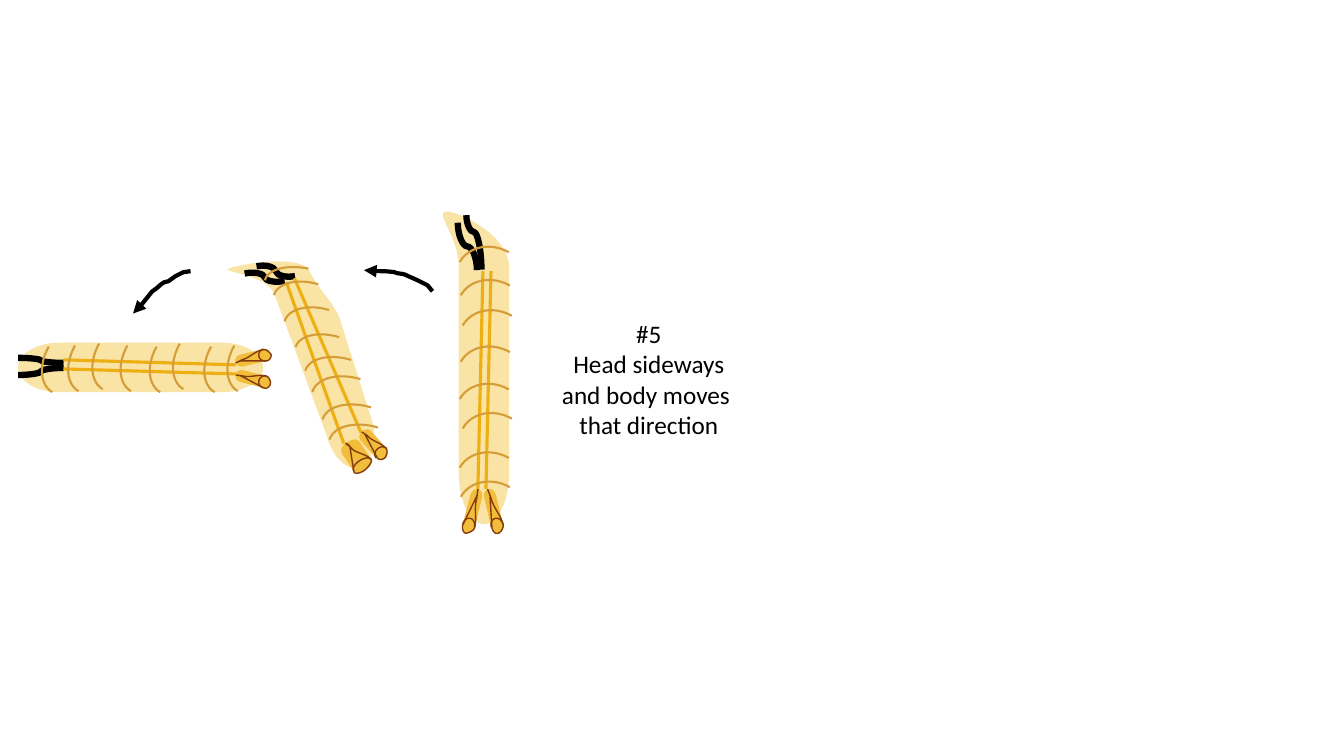
import math
from dataclasses import dataclass
from typing import Any, List, Optional, Tuple, Union

import lxml.etree
import pptx
import pptx.dml.color
import pptx.enum.shapes
import pptx.enum.text
import pptx.oxml.ns
import pptx.util

Inches = pptx.util.Inches
Shapes = pptx.enum.shapes.MSO_SHAPE
Connectors = pptx.enum.shapes.MSO_CONNECTOR
# A start point, then pairs for straight lines and sixes for Bezier curves
Path = List[Tuple[float, ...]]

BLACK, SKIN, GOLD, CORD, BROWN, RING = "000000", "F9E3A5", "F1BD3B", "EEAF12", "843C0B", "D59D37"
CURVE_STEPS = 12


@dataclass
class Box:
    left: float
    top: float
    width: float
    height: float
    rotation: float = 0


@dataclass
class Hook:
    box: Box
    flipped: bool
    bend: float = 0.5


@dataclass
class Spiracle:
    drum: Box
    outline: Path


@dataclass
class Larva:
    body: Union[Path, Box]
    hooks: List[Hook]
    spiracles: List[Spiracle]
    cords: List[Tuple[float, float, float, float]]
    rings: List[Box]


def color(value: str) -> pptx.dml.color.RGBColor:
    return pptx.dml.color.RGBColor.from_string(value)


def style(shape: Any, fill: Optional[str] = None, line: Optional[str] = None, width: float = 1) -> None:
    shape.shadow.inherit = False
    if fill:
        shape.fill.solid()
        shape.fill.fore_color.rgb = color(fill)
    else:
        shape.fill.background()
    if line:
        shape.line.color.rgb = color(line)
        shape.line.width = pptx.util.Pt(width)
    else:
        shape.line.fill.background()


def add_preset(shapes: Any, kind: Any, box: Box, **look: Any) -> None:
    shape = shapes.add_shape(kind, *map(Inches, (box.left, box.top, box.width, box.height)))
    shape.rotation = box.rotation
    style(shape, **look)


def flatten(path: Path) -> List[Tuple[float, float]]:
    points = [path[0]]
    for part in path[1:]:
        if len(part) == 2:
            points.append(part)
            continue
        controls = [points[-1], part[:2], part[2:4], part[4:]]
        for step in range(1, CURVE_STEPS + 1):
            t = step / CURVE_STEPS
            weights = [math.comb(3, i) * t**i * (1 - t) ** (3 - i) for i in range(4)]
            points.append(tuple(sum(w * p[axis] for w, p in zip(weights, controls)) for axis in (0, 1)))
    return points


def add_path(shapes: Any, path: Path, closed: bool = True, **look: Any) -> Any:
    points = [(Inches(x), Inches(y)) for x, y in flatten(path)]
    builder = shapes.build_freeform(*points[0], scale=1.0)
    builder.add_line_segments(points[1:], close=closed)
    shape = builder.convert_to_shape()
    style(shape, **look)
    return shape


def add_line(shapes: Any, kind: Any, ends: Tuple[float, ...], line: str, width: float) -> Any:
    connector = shapes.add_connector(kind, *map(Inches, ends))
    connector.line.color.rgb = color(line)
    connector.line.width = pptx.util.Pt(width)
    lxml.etree.SubElement(connector._element.spPr, pptx.oxml.ns.qn("a:effectLst"))
    return connector


def add_hook(shapes: Any, hook: Hook) -> None:
    box = hook.box
    sides = [box.left, box.left + box.width]
    if hook.flipped:
        sides.reverse()
    ends = (sides[0], box.top, sides[1], box.top + box.height)
    properties = add_line(shapes, Connectors.CURVE, ends, BLACK, 4.5)._element.spPr
    properties.xfrm.set("rot", str(round(box.rotation * 60000)))
    geometry = properties.find(pptx.oxml.ns.qn("a:prstGeom"))
    adjustments = geometry.find(pptx.oxml.ns.qn("a:avLst"))
    if adjustments is None:
        adjustments = lxml.etree.SubElement(geometry, pptx.oxml.ns.qn("a:avLst"))
    guide = lxml.etree.SubElement(adjustments, pptx.oxml.ns.qn("a:gd"))
    guide.set("name", "adj1")
    guide.set("fmla", f"val {round(hook.bend * 100000)}")


def drum_rim(box: Box) -> Path:
    """Inner half ellipse at the right end of a rotated drum."""
    turn = math.radians(box.rotation)
    rim = []
    for step in range(CURVE_STEPS + 1):
        angle = math.pi * (0.5 + step / CURVE_STEPS)
        x = box.width * (1 / 3 + math.cos(angle) / 6)
        y = box.height / 2 * math.sin(angle)
        rim.append((box.left + box.width / 2 + x * math.cos(turn) - y * math.sin(turn),
                    box.top + box.height / 2 + x * math.sin(turn) + y * math.cos(turn)))
    return rim


def add_larva(slide: Any, larva: Larva) -> None:
    shapes = slide.shapes.add_group_shape().shapes
    if isinstance(larva.body, Box):
        add_preset(shapes, Shapes.FLOWCHART_DIRECT_ACCESS_STORAGE, larva.body, fill=SKIN)
    else:
        add_path(shapes, larva.body, fill=SKIN)
    for hook in larva.hooks:
        add_hook(shapes, hook)
    for spiracle in larva.spiracles:
        add_preset(shapes, Shapes.FLOWCHART_DIRECT_ACCESS_STORAGE, spiracle.drum, fill=GOLD)
        add_path(shapes, drum_rim(spiracle.drum), closed=False, line=BROWN)
        add_path(shapes, spiracle.outline, line=BROWN)
    for cord in larva.cords:
        add_line(shapes, Connectors.STRAIGHT, cord, CORD, 2.25)
    for ring in larva.rings:
        add_preset(shapes, Shapes.ARC, ring, line=RING, width=1.5)


def add_arrow(slide: Any, path: Path) -> None:
    shape = add_path(slide.shapes, path, closed=False, line=BLACK, width=3)
    tail = lxml.etree.SubElement(shape.line._get_or_add_ln(), pptx.oxml.ns.qn("a:tailEnd"))
    tail.set("type", "triangle")


def add_text(slide: Any, text: str, box: Box, *, size: float, font: str, ink: str) -> None:
    shape = slide.shapes.add_textbox(*map(Inches, (box.left, box.top, box.width, box.height)))
    frame = shape.text_frame
    frame.word_wrap = False
    frame.text = text
    for paragraph in frame.paragraphs:
        paragraph.alignment = pptx.enum.text.PP_ALIGN.CENTER
        run = paragraph.runs[0]
        run.font.size, run.font.name = pptx.util.Pt(size), font
        run.font.color.rgb = color(ink)


UPRIGHT = Larva(
    [(5.05, 2.64), (5.05, 4.69), (5.05, 4.97, 4.94, 5.2, 4.8, 5.2), (4.66, 5.2, 4.55, 4.97, 4.55, 4.69),
     (4.55, 2.64), (4.55, 2.35, 4.3, 2.1, 4.43, 2.1), (4.57, 2.1, 5.05, 2.35, 5.05, 2.64)],
    [Hook(Box(4.43, 2.33, 0.54, 0.15, 270), True, 0.31), Hook(Box(4.4, 2.35, 0.47, 0.19, 270), True)],
    [Spiracle(Box(4.46, 5.01, 0.45, 0.12, 104.5), [
        (4.73, 4.94), (4.7, 5.04, 4.73, 5.13, 4.71, 5.23), (4.7, 5.27, 4.64, 5.29, 4.62, 5.29),
        (4.6, 5.29, 4.58, 5.25, 4.59, 5.21), (4.73, 4.92), (4.74, 4.88, 4.74, 4.85, 4.74, 4.85)]),
     Spiracle(Box(4.67, 5.01, 0.45, 0.12, 76.4), [
        (4.87, 4.94), (4.89, 5.03, 4.96, 5.1, 4.99, 5.2), (5, 5.24, 4.96, 5.29, 4.94, 5.29),
        (4.92, 5.3, 4.89, 5.28, 4.88, 5.24), (4.86, 4.92), (4.85, 4.88, 4.83, 4.85, 4.84, 4.86)])],
    [(x, 2.69, x - 0.05, 4.85) for x in (4.79, 4.87)],
    [Box(left, top, 0.65, 0.75, 299.8) for left, top in (
        (4.56, 2.41), (4.57, 2.74), (4.59, 3.04), (4.57, 3.4), (4.56, 3.77), (4.59, 4.06), (4.56, 4.45), (4.57, 4.74))],
)
LEANING = Larva(
    [(3.08, 2.71), (3.15, 2.85, 3.28, 2.98, 3.36, 3.13), (3.7, 4.21), (3.74, 4.42, 3.68, 4.61, 3.55, 4.64),
     (3.43, 4.67, 3.29, 4.52, 3.24, 4.32), (2.73, 2.94), (2.68, 2.73, 2.21, 2.7, 2.26, 2.67),
     (2.32, 2.63, 3.03, 2.5, 3.08, 2.71)],
    [Hook(Box(2.56, 2.6, 0.35, 0.18, 347), False), Hook(Box(2.44, 2.67, 0.37, 0.16, 347), False)],
    [Spiracle(Box(3.37, 4.42, 0.33, 0.21, 56.4), [
        (3.48, 4.44), (3.52, 4.5, 3.64, 4.5, 3.68, 4.56), (3.7, 4.58, 3.64, 4.65, 3.61, 4.67),
        (3.58, 4.69, 3.52, 4.71, 3.51, 4.68), (3.47, 4.43), (3.45, 4.4, 3.43, 4.4, 3.43, 4.4)]),
     Spiracle(Box(3.53, 4.34, 0.35, 0.14, 48.3), [
        (3.64, 4.32), (3.69, 4.38, 3.78, 4.39, 3.83, 4.45), (3.85, 4.47, 3.83, 4.53, 3.82, 4.54),
        (3.8, 4.56, 3.76, 4.57, 3.74, 4.54), (3.62, 4.31), (3.6, 4.29, 3.58, 4.28, 3.58, 4.28)])],
    [(2.84, 2.8, 3.41, 4.4), (2.92, 2.76, 3.58, 4.29)],
    [Box(2.82, 2.46, 0.4, 0.8, 281.5)] + [Box(*frame, 286.9) for frame in (
        (2.86, 2.65, 0.46, 0.78), (2.96, 2.91, 0.47, 0.78), (3.08, 3.17, 0.44, 0.77), (3.18, 3.39, 0.47, 0.81),
        (3.24, 3.59, 0.52, 0.84), (3.35, 3.86, 0.51, 0.85), (3.42, 4.06, 0.51, 0.85))],
)
LYING = Larva(
    Box(0.18, 3.4, 2.43, 0.49),
    [Hook(Box(0.18, 3.55, 0.45, 0.05), False), Hook(Box(0.18, 3.65, 0.45, 0.07, 180), True)],
    [Spiracle(Box(2.33, 3.7, 0.36, 0.12, 14.5), [
        (2.41, 3.73), (2.48, 3.75, 2.56, 3.71, 2.64, 3.73), (2.67, 3.74, 2.69, 3.79, 2.68, 3.81),
        (2.68, 3.83, 2.65, 3.86, 2.62, 3.85), (2.39, 3.73), (2.36, 3.72, 2.33, 3.72, 2.34, 3.72)]),
     Spiracle(Box(2.33, 3.49, 0.36, 0.12, 346.4), [
        (2.4, 3.57), (2.48, 3.55, 2.53, 3.48, 2.61, 3.47), (2.64, 3.46, 2.68, 3.5, 2.69, 3.52),
        (2.69, 3.54, 2.68, 3.57, 2.65, 3.58), (2.39, 3.58), (2.36, 3.59, 2.34, 3.6, 2.34, 3.6)])],
    [(0.63, y, 2.34, y + 0.05) for y in (3.66, 3.57)],
    [Box(left, top, 0.51, 0.75, 209.8) for left, top in (
        (0.45, 3.19), (0.71, 3.18), (0.95, 3.16), (1.23, 3.18), (1.52, 3.19), (1.75, 3.16), (2.06, 3.19), (2.29, 3.18))],
)
ARROWS = [
    [(4.29, 2.89), (4.24, 2.83), (4.2, 2.81), (4.14, 2.78), (4.05, 2.74), (3.99, 2.71, 3.99, 2.72, 3.94, 2.71),
     (3.91, 2.7), (3.84, 2.69, 3.78, 2.69, 3.72, 2.69), (3.64, 2.68, 3.67, 2.68, 3.61, 2.68)],
    [(1.89, 2.69), (1.82, 2.7), (1.74, 2.74), (1.67, 2.79), (1.63, 2.8), (1.58, 2.83, 1.58, 2.84, 1.54, 2.87),
     (1.51, 2.89), (1.47, 2.94, 1.43, 2.99, 1.39, 3.04), (1.34, 3.1, 1.36, 3.07, 1.32, 3.11)],
]


def main() -> None:
    presentation = pptx.Presentation()
    presentation.slide_width, presentation.slide_height = Inches(13.33), Inches(7.5)
    slide = presentation.slides.add_slide(presentation.slide_layouts[6])
    # Larvae and caption
    add_larva(slide, UPRIGHT)
    add_text(slide, "#5\nHead sideways\nand body moves \nthat direction", Box(5.46, 3.11, 1.95, 1.31),
             size=18, font="Calibri", ink=BLACK)
    add_larva(slide, LEANING)
    add_larva(slide, LYING)
    # Arrows from one pose to the next
    for path in ARROWS:
        add_arrow(slide, path)
    presentation.save("out.pptx")


if __name__ == "__main__":
    main()
